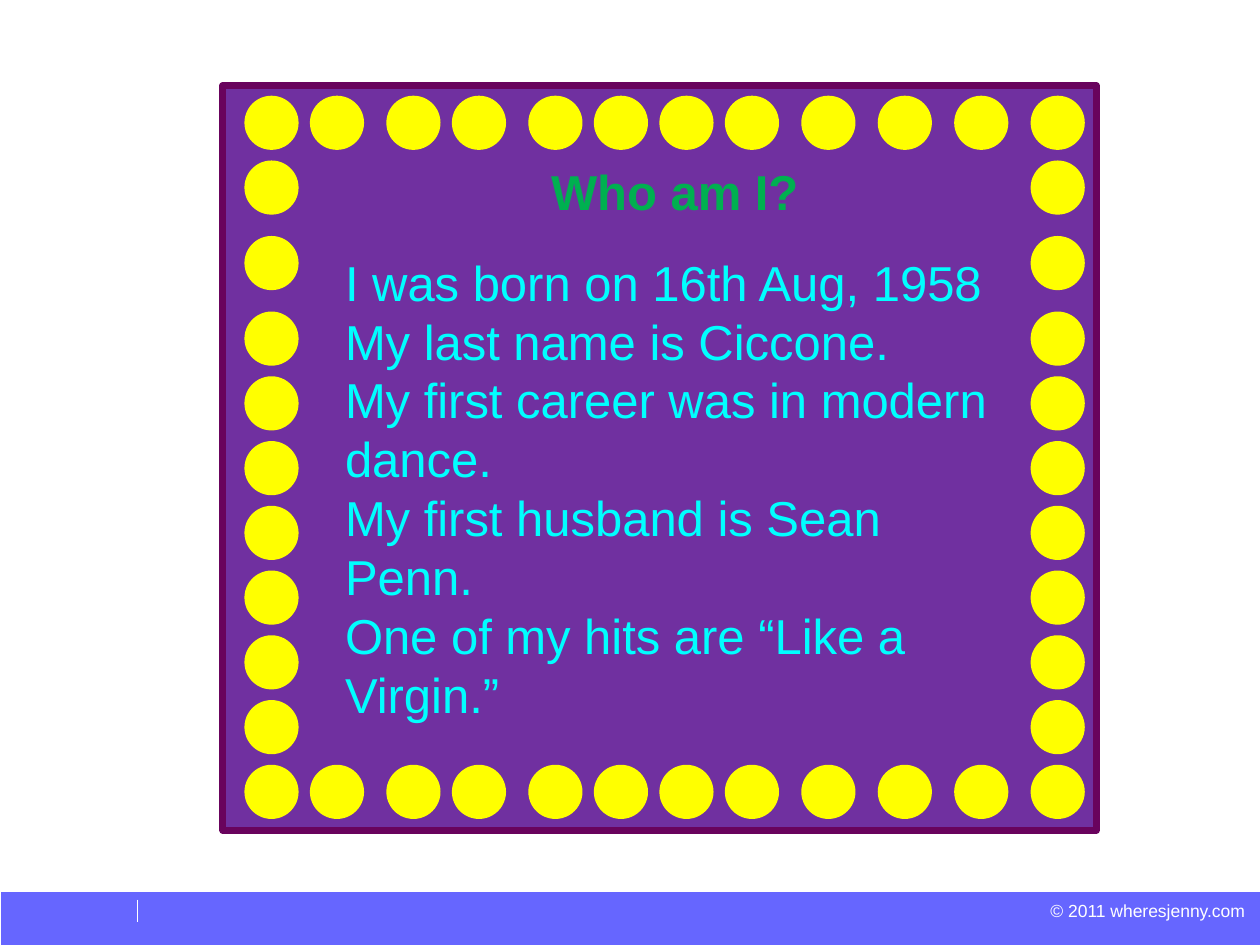
from dataclasses import dataclass
from itertools import accumulate

from lxml.etree import SubElement
from pptx import Presentation
from pptx.dml.color import RGBColor
from pptx.enum.shapes import MSO_CONNECTOR, MSO_SHAPE
from pptx.enum.text import MSO_ANCHOR, PP_ALIGN
from pptx.oxml.ns import qn
from pptx.util import Inches, Pt

SLIDE_WIDTH, SLIDE_HEIGHT = 10, 7.5
FONT = "Arial"
WHITE, FOOTER_BLUE = "FFFFFF", "6666FF"
PURPLE, PLUM, YELLOW = "7030A0", "69035D", "FFFF00"
GREEN, CYAN = "00B050", "00FFFF"

BULB_SIZE = 0.43
# Steps between neighbouring bulbs, in grid units: 6 is close, 7 is wide.
COLUMN_STEPS = (6, 7, 6, 7, 6, 6, 6, 7, 7, 7, 7)
ROW_STEPS = (6, 7, 7, 6, 6, 6, 6, 6, 6, 6)

CLUES = (
    "I was born on 16th Aug, 1958",
    "My last name is Ciccone.",
    "My first career was in modern dance.",
    "My first husband is Sean Penn.",
    "One of my hits are “Like a Virgin.”",
)


@dataclass(frozen=True)
class Box:
    left: float
    top: float
    width: float
    height: float

    def lengths(self) -> list:
        return [Inches(n) for n in (self.left, self.top, self.width, self.height)]


@dataclass(frozen=True)
class Line:
    text: str
    size: float
    color: str
    bold: bool = False
    alignment: PP_ALIGN = PP_ALIGN.LEFT
    space_before: float = 0


FOOTER = Box(0.01, 7.08, 9.99, 0.42)
BOARD = Box(1.77, 0.68, 6.93, 5.91)
BULB_SPAN = Box(1.94, 0.76, 6.24, 5.31)


def rgb(color: str) -> RGBColor:
    return RGBColor.from_string(color)


def add_filled(shapes, kind: MSO_SHAPE, box: Box, fill: str):
    shape = shapes.add_shape(kind, *box.lengths())
    shape.shadow.inherit = False
    shape.fill.solid()
    shape.fill.fore_color.rgb = rgb(fill)
    shape.line.fill.background()
    return shape


def add_text(shapes, box: Box, lines: list[Line], frame_format: dict) -> None:
    frame = shapes.add_textbox(*box.lengths()).text_frame
    for name, value in frame_format.items():
        setattr(frame, name, value)
    for index, line in enumerate(lines):
        paragraph = frame.paragraphs[0] if index == 0 else frame.add_paragraph()
        paragraph.alignment = line.alignment
        if line.space_before:
            paragraph.space_before = Pt(line.space_before)
        run = paragraph.add_run()
        run.text = line.text
        font_format = {"name": FONT, "size": Pt(line.size), "bold": line.bold}
        for name, value in font_format.items():
            setattr(run.font, name, value)
        run.font.color.rgb = rgb(line.color)


def spread(start: float, span: float, steps: tuple) -> list[float]:
    """Positions from start to start + span, spaced in proportion to steps."""
    total = sum(steps)
    return [start + span * unit / total for unit in accumulate(steps, initial=0)]


def add_footer(shapes) -> None:
    add_filled(shapes, MSO_SHAPE.RECTANGLE, FOOTER, FOOTER_BLUE)
    margins = ("margin_left", "margin_top", "margin_right", "margin_bottom")
    add_text(
        shapes,
        Box(8.32, 7.14, 1.56, 0.17),
        [Line("© 2011 wheresjenny.com", 10, WHITE, alignment=PP_ALIGN.RIGHT)],
        {"word_wrap": False, **dict.fromkeys(margins, 0)},
    )
    divider = shapes.add_connector(
        MSO_CONNECTOR.STRAIGHT, Inches(1.09), Inches(7.14), Inches(1.09), Inches(7.32)
    )
    divider.line.color.rgb = rgb(WHITE)
    divider.line.width = Pt(0.75)
    SubElement(divider._element.spPr, qn("a:effectLst"))


def add_board(shapes) -> None:
    group = shapes.add_group_shape().shapes
    board = add_filled(group, MSO_SHAPE.RECTANGLE, BOARD, PURPLE)
    board.line.color.rgb = rgb(PLUM)
    board.line.width = Pt(4)
    SubElement(board.line._get_or_add_ln(), qn("a:round"))

    columns = spread(BULB_SPAN.left, BULB_SPAN.width, COLUMN_STEPS)
    rows = spread(BULB_SPAN.top, BULB_SPAN.height, ROW_STEPS)
    for top in rows:
        on_edge = top in (rows[0], rows[-1])
        for left in columns if on_edge else (columns[0], columns[-1]):
            bulb = Box(left, top, BULB_SIZE, BULB_SIZE)
            add_filled(group, MSO_SHAPE.OVAL, bulb, YELLOW)


def add_riddle(shapes) -> None:
    title = Line("Who am I?", 28, GREEN, bold=True, alignment=PP_ALIGN.CENTER)
    clues = [
        Line(text, 28, CYAN, space_before=0 if index else 18.4)
        for index, text in enumerate(CLUES)
    ]
    add_text(
        shapes,
        Box(2.64, 1.23, 5.43, 4.61),
        [title, *clues],
        {"word_wrap": True, "vertical_anchor": MSO_ANCHOR.TOP},
    )


def main() -> None:
    presentation = Presentation()
    presentation.slide_width = Inches(SLIDE_WIDTH)
    presentation.slide_height = Inches(SLIDE_HEIGHT)
    slide = presentation.slides.add_slide(presentation.slide_layouts[6])
    add_footer(slide.shapes)
    add_board(slide.shapes)
    add_riddle(slide.shapes)
    presentation.save("out.pptx")


if __name__ == "__main__":
    main()
